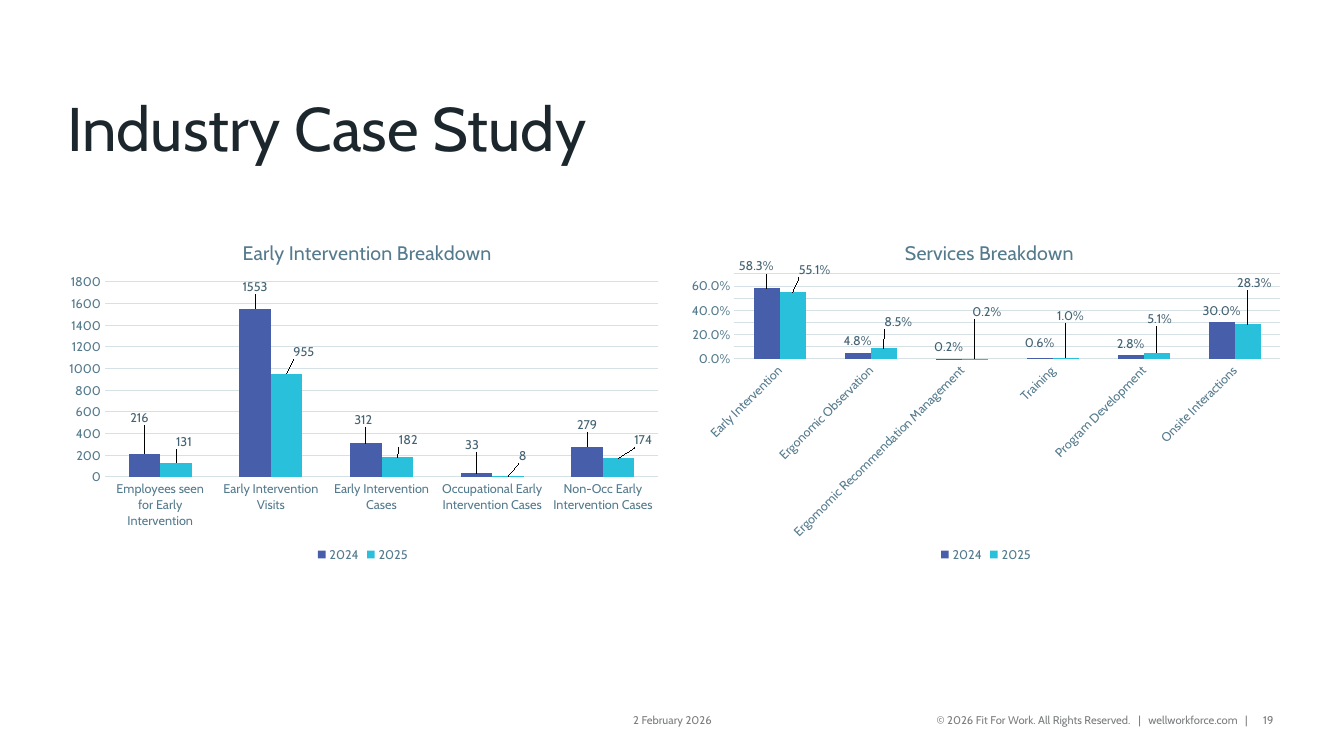
import pptx
import pptx.util
import pptx.chart.data
import pptx.dml.color
import pptx.enum.chart
import pptx.enum.text
import pptx.oxml
import pptx.oxml.ns

WIDE, HIGH = 13.33, 7.5
FACE = "Cabin"
INK, GREY, SLATE, DEEP, GRID = "1B272D", "7A7C7D", "547A8D", "446271", "D6E1E6"
BARS = ["475EAB", "28C0DA"]
YEARS = ["2024", "2025"]
FOOT, THIN = 93.87, 2.8  # footer top and height, in percent of the slide
ALIGN = pptx.enum.text.PP_ALIGN
MID = pptx.enum.text.MSO_ANCHOR.MIDDLE


def color(code):
    return pptx.dml.color.RGBColor.from_string(code)


def style(font, size, code):
    font.name = FACE
    font.size = pptx.util.Pt(size)
    font.bold = False
    font.color.rgb = color(code)


def place(left, top, width, height):
    """Turn percentages of the slide into lengths."""
    return [pptx.util.Inches(share * side / 100) for share, side in
            zip((left, top, width, height), (WIDE, HIGH, WIDE, HIGH))]


def add_title(slide, text):
    shape = slide.shapes.title
    shape.left, shape.top, shape.width, shape.height = place(5, 10, 90, 11.87)
    frame = shape.text_frame
    frame.text = text
    frame.auto_size = pptx.enum.text.MSO_AUTO_SIZE.NONE
    frame.vertical_anchor = pptx.enum.text.MSO_ANCHOR.BOTTOM
    frame.margin_left = frame.margin_right = 0
    frame.margin_top = frame.margin_bottom = 0
    para = frame.paragraphs[0]
    para.alignment = ALIGN.LEFT
    para.line_spacing = 0.9
    style(para.runs[0].font, 44, INK)


def add_note(slide, text, left, width, align, inset=0, stops=()):
    """Add a footer text; tab stops and inset are in inches."""
    box = slide.shapes.add_textbox(*place(left, FOOT, width, THIN))
    frame = box.text_frame
    frame.word_wrap = True
    frame.vertical_anchor = MID
    frame.margin_left, frame.margin_right = pptx.util.Inches(inset), 0
    frame.text = text
    para = frame.paragraphs[0]
    para.alignment = align
    if stops:
        tabs = pptx.oxml.parse_xml(
            f"<a:tabLst {pptx.oxml.ns.nsdecls('a')}>" + "".join(
                f'<a:tab pos="{pptx.util.Inches(stop)}" algn="l"/>'
                for stop in stops) + "</a:tabLst>")
        para._p.get_or_add_pPr().append(tabs)
    for run in para.runs:
        style(run.font, 8, GREY)


def layout(inner="", **shares):
    """Make a manual chart layout from percentages of the chart."""
    parts = [f'<c:layoutTarget val="{inner}"/>'] if inner else []
    if inner or "edge" in shares:
        parts += ['<c:xMode val="edge"/>', '<c:yMode val="edge"/>']
    parts += [f'<c:{key} val="{shares[key] / 100:.4f}"/>'
              for key in "xywh" if key in shares]
    return pptx.oxml.parse_xml(
        f"<c:layout {pptx.oxml.ns.nsdecls('c')}><c:manualLayout>"
        + "".join(parts) + "</c:manualLayout></c:layout>")


def set_layout(node, new, after=None):
    """Put a layout first in a node, or right after the named child."""
    for old in node.findall(pptx.oxml.ns.qn("c:layout")):
        node.remove(old)
    spot = node.find(pptx.oxml.ns.qn(after)) if after else None
    if spot is None:
        node.insert(0, new)
    else:
        spot.addnext(new)


def add_labels(bars, shifts, form):
    labels = bars.data_labels
    labels.show_value = True
    labels.number_format = form
    labels.number_format_is_linked = False
    labels.position = pptx.enum.chart.XL_LABEL_POSITION.OUTSIDE_END
    style(labels.font, 9, DEEP)
    for index, (x, y) in shifts.items():
        label = bars.points[index].data_label
        label.position = pptx.enum.chart.XL_LABEL_POSITION.OUTSIDE_END
        style(label.font, 9, DEEP)
    for node in bars._element.iter(pptx.oxml.ns.qn("c:dLbl")):
        index = int(node.find(pptx.oxml.ns.qn("c:idx")).get("val"))
        x, y = shifts[index]
        set_layout(node, layout(x=x, y=y), "c:idx")


def style_axes(chart, top, step, form, turn):
    for axis in (chart.category_axis, chart.value_axis):
        axis.major_tick_mark = pptx.enum.chart.XL_TICK_MARK.NONE
        axis.minor_tick_mark = pptx.enum.chart.XL_TICK_MARK.NONE
        axis.format.line.fill.background()
        style(axis.tick_labels.font, 9, SLATE)
    if turn:
        body = chart.category_axis._element.find(
            ".//" + pptx.oxml.ns.qn("a:bodyPr"))
        body.set("rot", str(turn * 60000))
    axis = chart.value_axis
    axis.minimum_scale, axis.maximum_scale, axis.major_unit = 0, top, step
    axis.tick_labels.number_format = form
    axis.tick_labels.number_format_is_linked = False
    line = axis.major_gridlines.format.line
    line.color.rgb = color(GRID)
    line.width = pptx.util.Pt(0.75)


def add_bars(slide, left, title, start, cats, rows, shifts, area,
             top, step, form="General", turn=0):
    data = pptx.chart.data.CategoryChartData(number_format=form)
    data.categories = cats
    for year, row in zip(YEARS, rows):
        data.add_series(year, row)
    chart = slide.shapes.add_chart(
        pptx.enum.chart.XL_CHART_TYPE.COLUMN_CLUSTERED,
        *place(left, 28.93, 45.6, 46), data).chart
    style(chart.font, 10, INK)

    # Title, legend and plot area
    chart.has_title = True
    chart.chart_title.text_frame.text = title
    style(chart.chart_title.text_frame.paragraphs[0].runs[0].font, 14, SLATE)
    set_layout(chart.chart_title._element,
               layout(edge=True, x=start, y=5), "c:tx")
    chart.has_legend = True
    chart.legend.position = pptx.enum.chart.XL_LEGEND_POSITION.BOTTOM
    chart.legend.include_in_layout = False
    style(chart.legend.font, 9, SLATE)
    plot_area = chart._chartSpace.find(".//" + pptx.oxml.ns.qn("c:plotArea"))
    set_layout(plot_area, layout("inner", **dict(zip("xywh", area))))

    # Columns and their labels
    plot = chart.plots[0]
    plot.gap_width, plot.overlap = 150, 0
    plot.vary_by_categories = False
    for bars, code, moves in zip(plot.series, BARS, shifts):
        bars.format.fill.solid()
        bars.format.fill.fore_color.rgb = color(code)
        add_labels(bars, moves, form)
    style_axes(chart, top, step, form, turn)


def main():
    deck = pptx.Presentation()
    deck.slide_width = pptx.util.Inches(WIDE)
    deck.slide_height = pptx.util.Inches(HIGH)
    slide = deck.slides.add_slide(deck.slide_layouts[5])
    add_title(slide, "Industry Case Study")

    # Footer
    add_note(slide, "2 February 2026", 45.39, 9.3, ALIGN.CENTER)
    add_note(slide, "© 2026 Fit For Work. All Rights Reserved.\t|\twellworkforce.com\t|",
             58.96, 33.98, ALIGN.LEFT, 1.43, (2, 2.1, 3.06))
    add_note(slide, "19", 92.95, 1.8, ALIGN.RIGHT)

    # Charts; label shifts are in percent of the chart
    add_bars(
        slide, 4.2, "Early Intervention Breakdown", 29.8,
        ["Employees seen for Early Intervention", "Early Intervention Visits",
         "Early Intervention Cases", "Occupational Early Intervention Cases",
         "Non-Occ Early Intervention Cases"],
        [(216, 1553, 312, 33, 279), (131, 955, 182, 8, 174)],
        [{0: (-0.8, -7), 1: (0, -3), 2: (-0.4, -3.3), 3: (-0.7, -4.8), 4: (0, -3)},
         {0: (1.3, -2.7), 1: (2.8, -2.8), 2: (1.8, -1.6), 3: (2.4, -2.5), 4: (4, -1.8)}],
        (7.9, 18.2, 90.3, 56.1), 1800, 200)
    add_bars(
        slide, 50.56, "Services Breakdown", 36.2,
        ["Early Intervention", "Ergonomic Observation",
         "Ergomomic Recommendation Management", "Training",
         "Program Development", "Onsite Interactions"],
        [(0.583, 0.048, 0.002, 0.006, 0.028, 0.3),
         (0.551, 0.085, 0.002, 0.01, 0.051, 0.283)],
        [{0: (-1.7, -2.9), 3: (0, -0.9)},
         {0: (3.6, -2.9), 1: (2.4, -4.3), 2: (2, -10), 3: (0.8, -8.6),
          4: (0.5, -6.3), 5: (1.1, -8.6)}],
        (8.9, 15.9, 89.1, 24.4), 0.7, 0.1, "0.0%", -45)
    deck.save("out.pptx")


if __name__ == "__main__":
    main()
